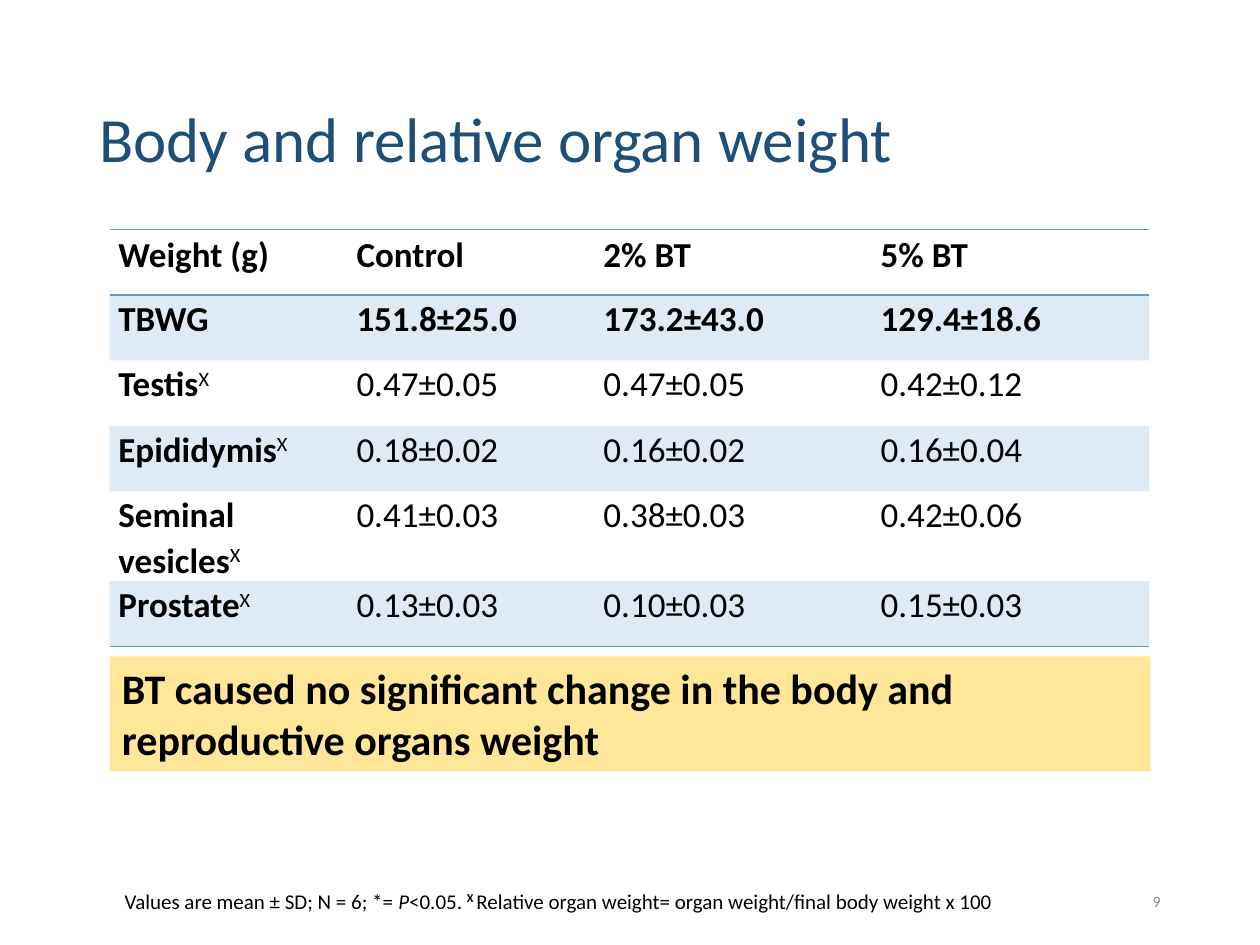
from lxml import etree
from pptx import Presentation
from pptx.dml.color import RGBColor
from pptx.enum.shapes import MSO_SHAPE
from pptx.enum.text import MSO_ANCHOR, PP_ALIGN
from pptx.oxml.ns import qn
from pptx.util import Inches, Pt

RECTANGLE = MSO_SHAPE.RECTANGLE
TOP, MIDDLE = MSO_ANCHOR.TOP, MSO_ANCHOR.MIDDLE
LEFT, RIGHT = PP_ALIGN.LEFT, PP_ALIGN.RIGHT

FONT = "Calibri"
COLORS = {
    "title": "1F4E79",
    "text": "000000",
    "accent": "5B9BD5",
    "callout": "FFE699",
    "number": "8C8C8C",
}
BAND_OPACITY = 20
PLAIN_TABLE_STYLE = "{2D5ABB26-0587-4C30-8999-92F81FD0307C}"

COLUMN_WIDTHS = [1.89, 1.96, 2.2, 2.2]
ROW_HEIGHT = 0.52
HEADER = ["Weight (g)", "Control", "2% BT", "5% BT"]
BODY_WEIGHT = ["TBWG", "151.8±25.0", "173.2±43.0", "129.4±18.6"]
ORGAN_WEIGHTS = [
    ["Testis", "0.47±0.05", "0.47±0.05", "0.42±0.12"],
    ["Epididymis", "0.18±0.02", "0.16±0.02", "0.16±0.04"],
    ["Seminal vesicles", "0.41±0.03", "0.38±0.03", "0.42±0.06"],
    ["Prostate", "0.13±0.03", "0.10±0.03", "0.15±0.03"],
]
ROWS = [HEADER, BODY_WEIGHT, *ORGAN_WEIGHTS]
FOOTNOTE = [
    ("Values are mean ± SD; N = 6; *= ", ""),
    ("P", "italic"),
    ("<0.05. ", ""),
    ("X ", "bold superscript"),
    ("Relative organ weight= organ weight/final body weight x 100", ""),
]


def rgb(name):
    return RGBColor.from_string(COLORS[name])


def write_runs(paragraph, runs, size, color="text"):
    """Add (text, style) runs; style may hold bold, italic and superscript."""
    for text, style in runs:
        run = paragraph.add_run()
        run.text = text
        font = run.font
        font.name, font.size = FONT, Pt(size)
        font.color.rgb = rgb(color)
        font.bold = "bold" in style
        font.italic = "italic" in style
        if "superscript" in style:
            run._r.get_or_add_rPr().set("baseline", "30000")


def add_text(slide, box, runs, size, color="text", anchor=TOP, align=LEFT):
    shape = slide.shapes.add_textbox(*map(Inches, box))
    frame = shape.text_frame
    frame.word_wrap = True
    frame.vertical_anchor = anchor
    paragraph = frame.paragraphs[0]
    paragraph.alignment = align
    write_runs(paragraph, runs, size, color)
    return paragraph


def add_callout(slide, box, text):
    shape = slide.shapes.add_shape(RECTANGLE, *map(Inches, box))
    shape.shadow.inherit = False
    shape.fill.solid()
    shape.fill.fore_color.rgb = rgb("callout")
    shape.line.fill.background()
    frame = shape.text_frame
    frame.word_wrap = True
    frame.vertical_anchor = TOP
    paragraph = frame.paragraphs[0]
    paragraph.alignment = LEFT
    write_runs(paragraph, [(text, "bold")], 24)


def add_border(cell, side):
    properties = cell._tc.get_or_add_tcPr()
    line = etree.SubElement(properties, qn(f"a:{side}"), w=str(Pt(1)))
    fill = etree.SubElement(line, qn("a:solidFill"))
    etree.SubElement(fill, qn("a:srgbClr"), val=COLORS["accent"])


def shade_band(cell):
    cell.fill.solid()
    cell.fill.fore_color.rgb = rgb("accent")
    color = cell._tc.tcPr.find(f".//{qn('a:solidFill')}[last()]")
    color = cell._tc.tcPr.find(f"{qn('a:solidFill')}/{qn('a:srgbClr')}")
    etree.SubElement(color, qn("a:alpha"), val=str(BAND_OPACITY * 1000))


def cell_runs(row, column):
    text = ROWS[row][column]
    is_organ = ROWS[row] in ORGAN_WEIGHTS
    if is_organ and column == 0:
        return [(text, "bold"), ("X", "superscript")]
    return [(text, "" if is_organ else "bold")]


def fill_cell(cell, row, column):
    is_header = row == 0
    cell.margin_left = cell.margin_right = Inches(0.07)
    cell.margin_top = cell.margin_bottom = Inches(0.04 if is_header else 0)
    paragraph = cell.text_frame.paragraphs[0]
    if not is_header:
        paragraph.line_spacing = 1.07
    write_runs(paragraph, cell_runs(row, column), 20)
    if is_header:
        add_border(cell, "lnT")
    if row in (0, len(ROWS) - 1):
        add_border(cell, "lnB")
    if row % 2:
        shade_band(cell)
    else:
        cell.fill.background()


def add_weight_table(slide, left, top):
    size = sum(COLUMN_WIDTHS), ROW_HEIGHT * len(ROWS)
    table = slide.shapes.add_table(
        len(ROWS), len(COLUMN_WIDTHS), *map(Inches, (left, top, *size))
    ).table
    table._tbl.tblPr.find(qn("a:tableStyleId")).text = PLAIN_TABLE_STYLE
    for column, width in zip(table.columns, COLUMN_WIDTHS):
        column.width = Inches(width)
    for row in range(len(ROWS)):
        table.rows[row].height = Inches(ROW_HEIGHT)
        for column in range(len(COLUMN_WIDTHS)):
            fill_cell(table.cell(row, column), row, column)


def main():
    presentation = Presentation()
    presentation.slide_width = Inches(10)
    presentation.slide_height = Inches(7.5)
    slide = presentation.slides.add_slide(presentation.slide_layouts[6])

    title = add_text(slide, (0.69, 0.4, 8.62, 1.45),
                     [("Body and relative organ weight", "")], 36, "title", MIDDLE)
    title.line_spacing = 0.9
    add_weight_table(slide, 0.87, 1.82)
    add_text(slide, (7.06, 6.95, 2.25, 0.4), [("9", "")], 9, "number", MIDDLE, RIGHT)
    add_text(slide, (0.89, 7, 7.99, 0.3), FOOTNOTE, 12)
    add_callout(slide, (0.87, 5.21, 8.26, 0.91),
                "BT caused no significant change in the body and "
                "reproductive organs weight")
    presentation.save("out.pptx")


if __name__ == "__main__":
    main()
